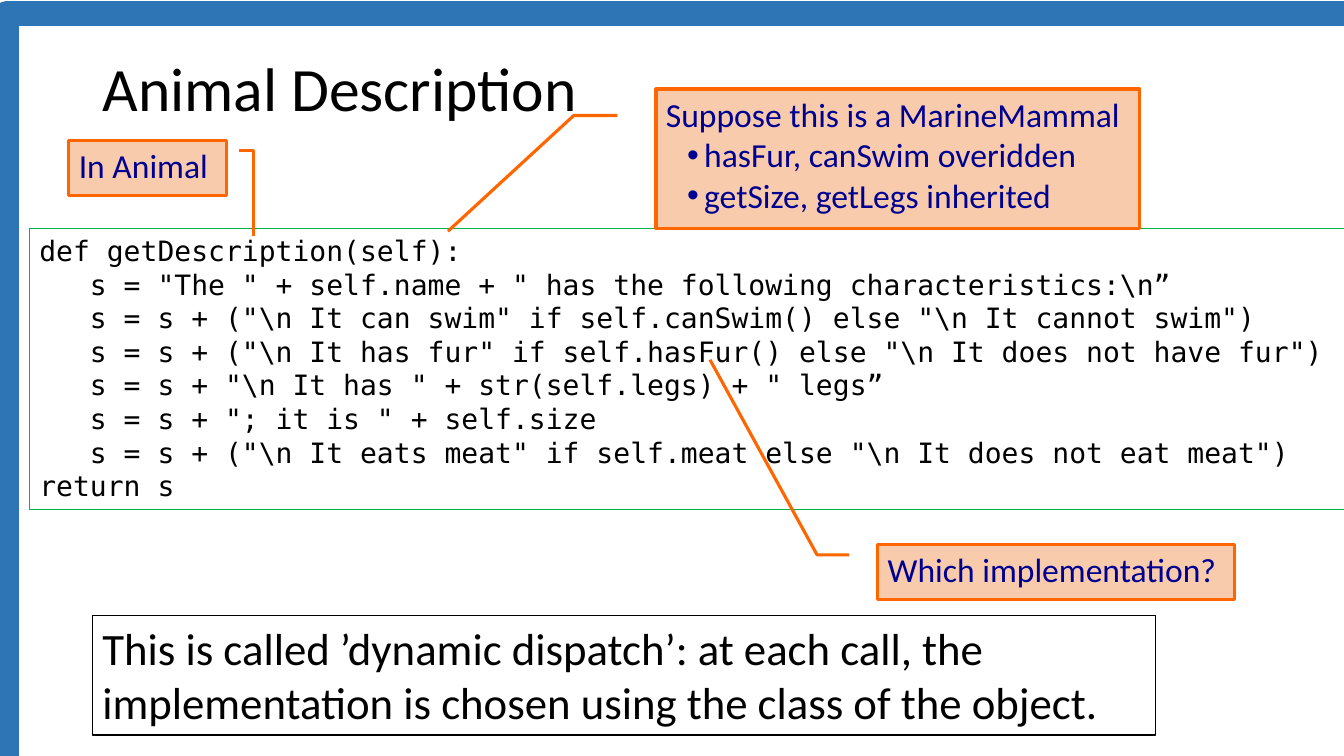
from dataclasses import dataclass

from lxml.etree import SubElement
from pptx import Presentation
from pptx.dml.color import RGBColor
from pptx.enum.shapes import MSO_SHAPE as Kind
from pptx.enum.text import MSO_ANCHOR as Anchor, MSO_AUTO_SIZE as Fit, PP_ALIGN as Align
from pptx.oxml.ns import qn
from pptx.shapes.autoshape import Shape
from pptx.slide import Slide
from pptx.text.text import TextFrame
from pptx.util import Inches, Pt

CELL = 762000
SANS, MONO = "Calibri", "DejaVu Sans Mono"
ELBOW = (0.19, -0.08, 0.19, -0.17)
CODE = r'''def getDescription(self):
   s = "The " + self.name + " has the following characteristics:\n”
   s = s + ("\n It can swim" if self.canSwim() else "\n It cannot swim")
   s = s + ("\n It has fur" if self.hasFur() else "\n It does not have fur")
   s = s + "\n It has " + str(self.legs) + " legs”
   s = s + "; it is " + self.size
   s = s + ("\n It eats meat" if self.meat else "\n It does not eat meat")
return s'''


@dataclass(frozen=True)
class Area:
    """A place on the 16 by 9 grid, in columns and rows."""
    col: float
    row: float
    wide: float
    high: float


@dataclass(frozen=True)
class Panel:
    """A framed text that grows with its lines."""
    area: Area
    lines: tuple[str, ...]
    edge: str
    weight: float
    size: int
    face: str


@dataclass(frozen=True)
class Note:
    """A callout with its leader's tip as shares of its height and width."""
    area: Area
    head: str
    tip: tuple[float, float]
    points: tuple[str, ...] = ()
    flip: bool = False


PANELS = (
    Panel(Area(0.35, 2.72, 15.66, 3.35), tuple(CODE.splitlines()), "00B050", 0.75, 20, MONO),
    Panel(Area(1.1, 7.33, 12.66, 1.42),
          ("This is called ’dynamic dispatch’: at each call, the "
           "implementation is chosen using the class of the object.",),
          "000000", 1, 32, SANS),
)
NOTES = (
    Note(Area(7.81, 1.06, 5.76, 1.66), "Suppose this is a MarineMammal", (1.02, -0.43),
         ("hasFur, canSwim overidden", "getSize, getLegs inherited")),
    Note(Area(0.82, 1.67, 1.88, 0.66), "In Animal", (1.73, -0.17), flip=True),
    Note(Area(10.45, 6.48, 4.25, 0.66), "Which implementation?", (-3.33, -0.47)),
)


def tint(code: str) -> RGBColor:
    """Turn a hex string into a colour."""
    return RGBColor.from_string(code)


def place(shape: Shape, area: Area) -> None:
    """Put a shape on its grid area."""
    shape.left, shape.top, shape.width, shape.height = (
        round(n * CELL) for n in (area.col, area.row, area.wide, area.high))


def draw(slide: Slide, kind: Kind, area: Area, fill: str, edge: str, weight: float) -> Shape:
    """Add a shape; an empty fill leaves it open."""
    shape = slide.shapes.add_shape(kind, 0, 0, CELL, CELL)
    place(shape, area)
    shape.shadow.inherit = False
    if fill:
        shape.fill.solid()
        shape.fill.fore_color.rgb = tint(fill)
    else:
        shape.fill.background()
    shape.line.color.rgb = tint(edge)
    shape.line.width = Pt(weight)
    return shape


def write(frame: TextFrame, lines: tuple[str, ...], size: int, face: str, ink: str,
          marks: bool = False) -> None:
    """Write one paragraph a line, with bullets after the first if marked."""
    frame.word_wrap = True
    for rank, line in enumerate(lines):
        para = frame.add_paragraph() if rank else frame.paragraphs[0]
        para.alignment = Align.LEFT
        if marks and rank:
            props = para._p.get_or_add_pPr()
            props.set("marL", str(Inches(0.38)))
            props.set("indent", str(-Inches(0.17)))
            SubElement(props, qn("a:buFont"), typeface="Arial")
            SubElement(props, qn("a:buChar"), char="•")
        run = para.add_run()
        run.text = line
        run.font.size, run.font.name = Pt(size), face
        run.font.color.rgb = tint(ink)


def panel(slide: Slide, item: Panel) -> None:
    """Add a framed text."""
    shape = draw(slide, Kind.RECTANGLE, item.area, "FFFFFF", item.edge, item.weight)
    shape.text_frame.vertical_anchor = Anchor.TOP
    shape.text_frame.auto_size = Fit.SHAPE_TO_FIT_TEXT
    write(shape.text_frame, item.lines, item.size, item.face, "000000")


def note(slide: Slide, item: Note) -> None:
    """Add a callout with a bent leader."""
    shape = draw(slide, Kind.LINE_CALLOUT_2, item.area, "F8CBAD", "FF6600", 2.25)
    for rank, share in enumerate(ELBOW + item.tip):
        shape.adjustments[rank] = share
    if item.flip:
        shape._element.spPr.find(qn("a:xfrm")).set("flipH", "1")
    shape.text_frame.vertical_anchor = Anchor.TOP
    write(shape.text_frame, (item.head, *item.points), 24, SANS, "000090", marks=True)


def main() -> None:
    """Build and save the slide."""
    deck = Presentation()
    deck.slide_width, deck.slide_height = 16 * CELL, 9 * CELL
    slide = deck.slides.add_slide(deck.slide_layouts[5])
    draw(slide, Kind.RECTANGLE, Area(0.08, 0.16, 16.07, 9.06), "", "2E75B6", 18)
    title = slide.shapes.title
    place(title, Area(1.1, 0.48, 13.8, 1.22))
    title.text_frame.vertical_anchor = Anchor.MIDDLE
    title.text_frame.auto_size = Fit.NONE
    write(title.text_frame, ("Animal Description",), 44, SANS, "000000")
    title.text_frame.paragraphs[0].line_spacing = 0.9
    panel(slide, PANELS[0])
    for item in NOTES:
        note(slide, item)
    panel(slide, PANELS[1])
    deck.save("out.pptx")


if __name__ == "__main__":
    main()
